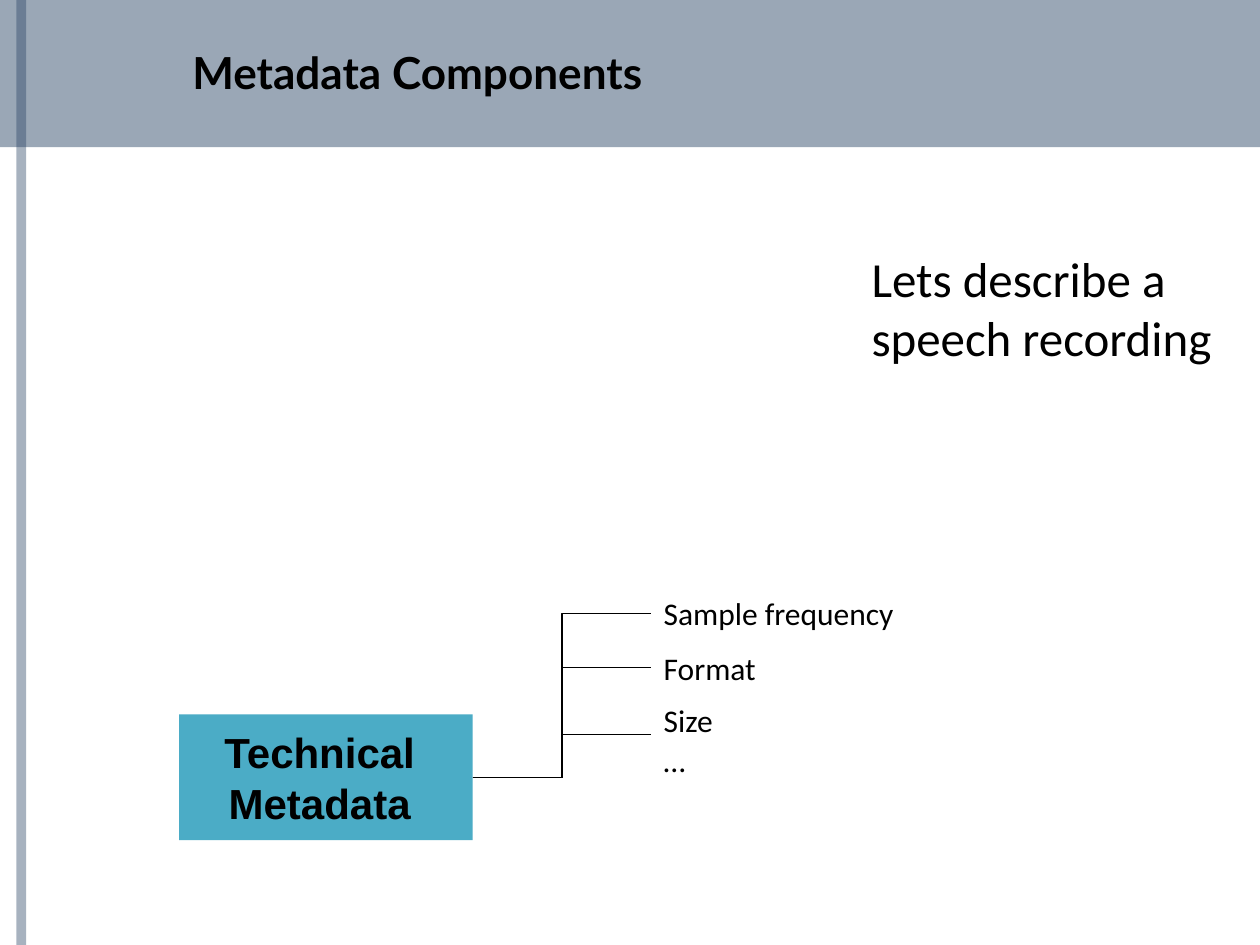
"""Build the slide on the technical metadata of a speech recording."""
from dataclasses import dataclass

from lxml import etree
from pptx import Presentation
from pptx.dml.color import RGBColor
from pptx.enum.shapes import MSO_CONNECTOR, MSO_SHAPE
from pptx.enum.text import MSO_ANCHOR, MSO_AUTO_SIZE, PP_ALIGN
from pptx.oxml.ns import qn
from pptx.util import Cm, Pt

RECTANGLE = MSO_SHAPE.RECTANGLE
ELBOW = MSO_CONNECTOR.ELBOW
TOP, MIDDLE = MSO_ANCHOR.TOP, MSO_ANCHOR.MIDDLE
LEFT, CENTER = PP_ALIGN.LEFT, PP_ALIGN.CENTER
FIT_SHAPE, NO_FIT = MSO_AUTO_SIZE.SHAPE_TO_FIT_TEXT, MSO_AUTO_SIZE.NONE

SLIDE_WIDTH, SLIDE_HEIGHT = 25.4, 19.05
NAVY, TEAL, BLACK = "254061", "4BACC6", "000000"
LABEL_LEFT, LABEL_HEIGHT = 13.13, 1.02


@dataclass(frozen=True)
class Area:
    """A rectangle on the slide, in centimetres."""
    left: float
    top: float
    width: float
    height: float

    def lengths(self) -> list:
        """Return left, top, width and height as lengths."""
        return [Cm(value) for value in (self.left, self.top, self.width, self.height)]


@dataclass(frozen=True)
class TextStyle:
    """The look of a text."""
    name: str
    size: float
    bold: bool = False
    alignment: PP_ALIGN = LEFT
    anchor: MSO_ANCHOR = TOP
    wrap: bool = False


@dataclass(frozen=True)
class Detail:
    """A metadata field: its label and the height its branch ends at."""
    text: str
    top: float
    width: float
    branch_end: float | None = None


TITLE_STYLE = TextStyle("Lato", 25.2, bold=True, anchor=MIDDLE, wrap=True)
BOX_STYLE = TextStyle("Arial", 24, bold=True, alignment=CENTER, anchor=MIDDLE, wrap=True)
LABEL_STYLE = TextStyle("Calibri", 18)
CALLOUT_STYLE = TextStyle("Calibri", 28)

HEADER = Area(0, 0, SLIDE_WIDTH, 2.97)
STRIPE = Area(0.33, 0, 0.2, SLIDE_HEIGHT)
TITLE = Area(3.63, 0.76, 17.81, 1.37)
BOX = Area(3.61, 14.4, 5.92, 2.54)
CALLOUT = Area(17.32, 4.88, 8.08, 2.64)
DETAILS = (
    Detail("Sample frequency", 11.86, 5.69, 12.37),
    Detail("Format", 12.95, 2.54, 13.46),
    Detail("Size", 14.0, 1.75, 14.81),
    Detail("…", 14.81, 1.14),
)


def color(value: str) -> RGBColor:
    """Turn a hex string into a colour."""
    return RGBColor.from_string(value)


def apply_format(target, values: dict) -> None:
    """Set each named attribute on the target."""
    for name, value in values.items():
        setattr(target, name, value)


def write_text(shape, lines: tuple, style: TextStyle) -> None:
    """Write one paragraph per line in the given style."""
    frame = shape.text_frame
    frame.text = "\n".join(lines)
    apply_format(frame, {
        "auto_size": NO_FIT if style.wrap else FIT_SHAPE,
        "word_wrap": style.wrap,
        "vertical_anchor": style.anchor,
    })
    for paragraph in frame.paragraphs:
        paragraph.alignment = style.alignment
        for run in paragraph.runs:
            apply_format(run.font, {
                "name": style.name, "size": Pt(style.size), "bold": style.bold})
            run.font.color.rgb = color(BLACK)


def add_text(slide, area: Area, lines: tuple, style: TextStyle) -> None:
    """Add a text box."""
    write_text(slide.shapes.add_textbox(*area.lengths()), lines, style)


def add_rectangle(slide, area: Area, fill: str, opacity: int = 100):
    """Add a borderless rectangle, with opacity in percent."""
    shape = slide.shapes.add_shape(RECTANGLE, *area.lengths())
    shape.shadow.inherit = False
    shape.line.fill.background()
    shape.fill.solid()
    shape.fill.fore_color.rgb = color(fill)
    if opacity < 100:
        fill_color = shape.fill._xPr.find(f".//{qn('a:srgbClr')}")
        etree.SubElement(fill_color, qn("a:alpha"), val=str(opacity * 1000))
    return shape


def add_branch(slide, end_y: float) -> None:
    """Link the right side of the box to a label."""
    start = (BOX.left + BOX.width, BOX.top + BOX.height / 2)
    points = [Cm(value) for value in (*start, LABEL_LEFT, end_y)]
    connector = slide.shapes.add_connector(ELBOW, *points)
    connector.line.width = Pt(0.75)
    connector.line.color.rgb = color(BLACK)
    etree.SubElement(connector._element.spPr, qn("a:effectLst"))


def main() -> None:
    """Build and save the presentation."""
    presentation = Presentation()
    apply_format(presentation, {
        "slide_width": Cm(SLIDE_WIDTH), "slide_height": Cm(SLIDE_HEIGHT)})
    slide = presentation.slides.add_slide(presentation.slide_layouts[6])

    add_rectangle(slide, HEADER, NAVY, 46)
    add_rectangle(slide, STRIPE, NAVY, 40)
    add_text(slide, TITLE, ("Metadata Components",), TITLE_STYLE)

    box = add_rectangle(slide, BOX, TEAL)
    write_text(box, ("Technical", "Metadata"), BOX_STYLE)
    box.text_frame.margin_left = Cm(0)

    for detail in DETAILS:
        area = Area(LABEL_LEFT, detail.top, detail.width, LABEL_HEIGHT)
        add_text(slide, area, (detail.text,), LABEL_STYLE)
        if detail.branch_end is not None:
            add_branch(slide, detail.branch_end)

    add_text(slide, CALLOUT, ("Lets describe a", "speech recording"), CALLOUT_STYLE)
    presentation.save("out.pptx")


if __name__ == "__main__":
    main()
